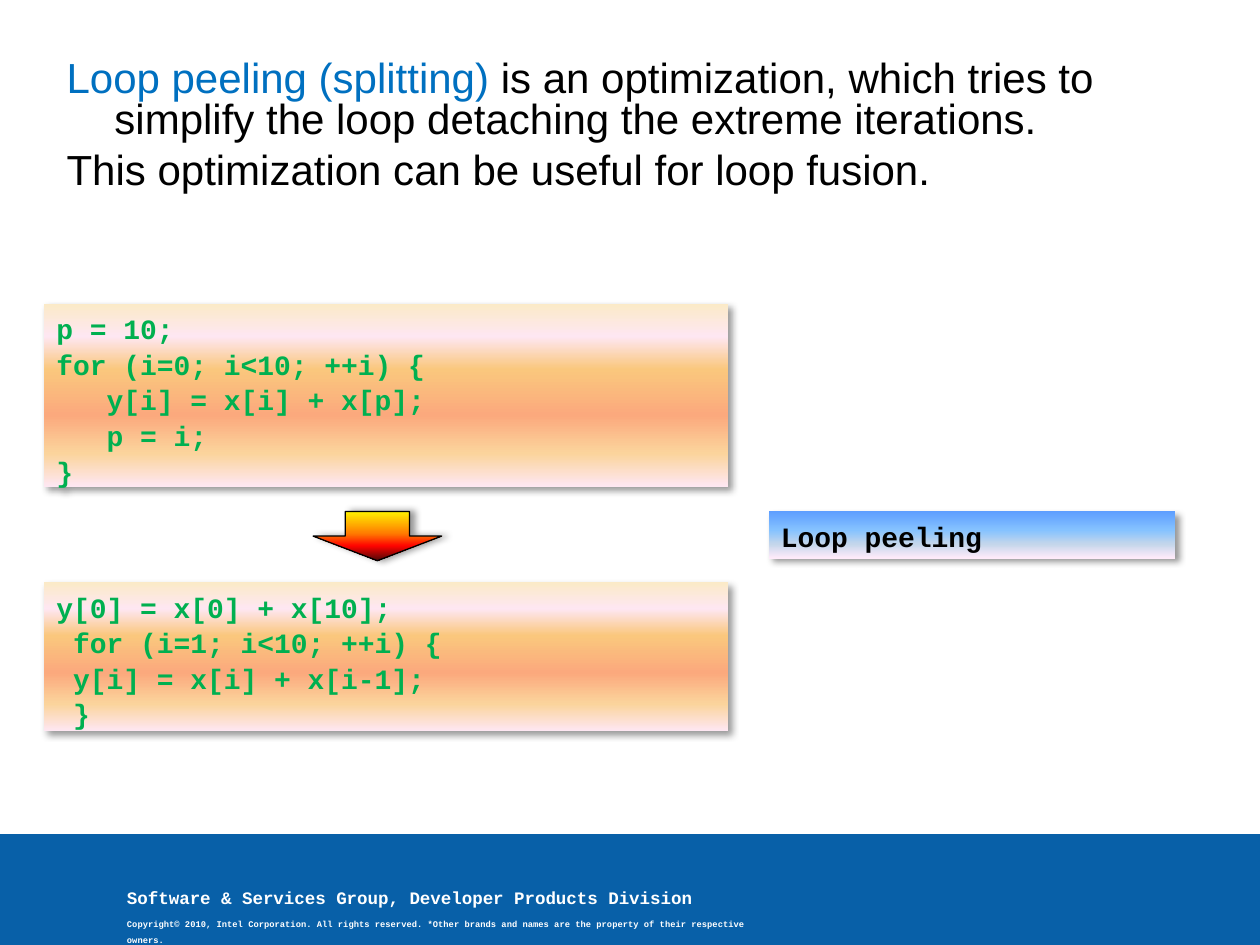
"""Build a slide that explains loop peeling with code before and after."""
from lxml.etree import SubElement
from pptx import Presentation
from pptx.dml.color import RGBColor
from pptx.enum.shapes import MSO_SHAPE as Preset
from pptx.enum.text import MSO_ANCHOR as Anchor, PP_ALIGN as Align
from pptx.oxml.ns import qn
from pptx.util import Inches, Pt

COLORS = {"footer": "0860A8", "white": "FFFFFF", "black": "000000",
          "term": "0070C0", "code": "00B050"}
GRADIENTS = {
    "code": [(0, "FBEAC7"), (18, "FEE7F2"), (36, "FAC77D"),
             (61, "FBA97D"), (82, "FBD49C"), (100, "FEE7F2")],
    "arrow": [(0, "FFF200"), (45, "FF7A00"), (70, "FF0300"), (100, "4D0808")],
    "label": [(0, "5E9EFF"), (40, "85C2FF"), (70, "C4D6EB"), (100, "FFEBFA")],
}
WIDTH, HEIGHT = 10, 7.5
LEFT, CODE_WIDTH, MIDDLE_TOP = 0.35, 5.43, 4.06
ARROW_WIDTH, LINE_HEIGHT, PADDING = 1.02, 0.27, 0.1
FOOTER_TOP = 6.62

BODY = {"name": "Arial", "size": Pt(24)}
CODE = {"name": "Courier New", "size": Pt(16), "bold": True}
GROUP = CODE | {"size": Pt(10)}
RIGHTS = CODE | {"size": Pt(5)}

INTRO = [
    [("Loop peeling (splitting) ", "term", BODY),
     ("is an optimization, which tries to simplify the loop detaching "
      "the extreme iterations.", "black", BODY)],
    [("This optimization can be useful for loop fusion.", "black", BODY)],
]
FOOTER = [
    [("Software & Services Group, Developer Products Division", "white", GROUP)],
    [("Copyright© 2010, Intel Corporation. All rights reserved. *Other brands "
      "and names are the property of their respective owners.", "white", RIGHTS)],
]
BEFORE = ["p = 10;", "for (i=0; i<10; ++i) {", "   y[i] = x[i] + x[p];",
          "   p = i;", "}"]
AFTER = ["y[0] = x[0] + x[10];", " for (i=1; i<10; ++i) {",
         " y[i] = x[i] + x[i-1];", " }"]
PANELS = [
    (LEFT, 2.41, CODE_WIDTH, BEFORE, "code", "code"),
    (LEFT, 4.62, CODE_WIDTH, AFTER, "code", "code"),
    (6.1, MIDDLE_TOP, 3.23, ["Loop peeling"], "label", "black"),
]


def assign(target, values):
    for name, value in values.items():
        setattr(target, name, value)


def write(frame, paragraphs, formats):
    for index, (spans, form) in enumerate(zip(paragraphs, formats)):
        para = frame.paragraphs[0] if index == 0 else frame.add_paragraph()
        assign(para, form)
        for text, color, font in spans:
            span = para.add_run()
            span.text = text
            assign(span.font, font)
            span.font.color.rgb = RGBColor.from_string(COLORS[color])


def add_text(page, place, paragraphs, formats, wrap):
    box = page.shapes.add_textbox(*map(Inches, place))
    box.text_frame.word_wrap = wrap
    write(box.text_frame, paragraphs, formats)
    return box


def add_color(parent, color):
    return SubElement(parent, qn("a:srgbClr"), val=color)


def add_gradient_shape(page, preset, place, gradient, direction):
    shape = page.shapes.add_shape(preset, *map(Inches, place))
    shape.line.fill.background()
    shape.fill.gradient()
    shape.fill.gradient_angle = 270
    properties = shape.element.spPr
    stops = properties.find(".//" + qn("a:gsLst"))
    for stop in list(stops):
        stops.remove(stop)
    for position, color in GRADIENTS[gradient]:
        add_color(SubElement(stops, qn("a:gs"), pos=str(position * 1000)), color)
    shape.shadow.inherit = False
    shadow = SubElement(properties.find(qn("a:effectLst")), qn("a:outerShdw"),
                        blurRad=str(Pt(4)), dist=str(Pt(3)),
                        dir=str(direction * 60000), algn="tl", rotWithShape="0")
    SubElement(add_color(shadow, COLORS["black"]), qn("a:alpha"), val="40000")
    return shape


def add_panel(page, left, top, width, lines, gradient, color):
    height = len(lines) * LINE_HEIGHT + PADDING
    panel = add_gradient_shape(page, Preset.RECTANGLE, (left, top, width, height),
                               gradient, 45)
    assign(panel.text_frame, {"word_wrap": True, "vertical_anchor": Anchor.TOP})
    form = {"alignment": Align.LEFT, "line_spacing": 1.06}
    write(panel.text_frame, [[(line, color, CODE)] for line in lines],
          [form] * len(lines))


def add_footer(page):
    band = page.shapes.add_shape(Preset.RECTANGLE, 0, Inches(FOOTER_TOP),
                                 Inches(WIDTH), Inches(HEIGHT - FOOTER_TOP))
    band.shadow.inherit = False
    band.fill.solid()
    band.fill.fore_color.rgb = RGBColor.from_string(COLORS["footer"])
    band.line.fill.background()
    add_text(page, (0.91, 6.96, 5.13, 0.45), FOOTER,
             [{"line_spacing": 1.2}, {"line_spacing": 1.5, "space_before": Pt(3.1)}],
             False)


def add_intro(page):
    box = add_text(page, (0.43, 0.44, 8.98, 1.42), INTRO,
                   [{"line_spacing": 0.8},
                    {"line_spacing": 0.8, "space_before": Pt(6)}], True)
    for para in box.text_frame.paragraphs:
        indent = para._p.get_or_add_pPr()
        indent.set("marL", str(Inches(0.38)))
        indent.set("indent", str(-Inches(0.38)))


def main():
    deck = Presentation()
    assign(deck, {"slide_width": Inches(WIDTH), "slide_height": Inches(HEIGHT)})
    page = deck.slides.add_slide(deck.slide_layouts[6])
    add_footer(page)
    add_intro(page)
    for panel in PANELS:
        add_panel(page, *panel)
    arrow_left = LEFT + (CODE_WIDTH - ARROW_WIDTH) / 2 - 0.07
    arrow = add_gradient_shape(page, Preset.DOWN_ARROW,
                               (arrow_left, MIDDLE_TOP, ARROW_WIDTH, 0.39),
                               "arrow", 0)
    arrow.line.color.rgb = RGBColor.from_string(COLORS["black"])
    arrow.line.width = Pt(0.75)
    deck.save("out.pptx")


if __name__ == "__main__":
    main()
